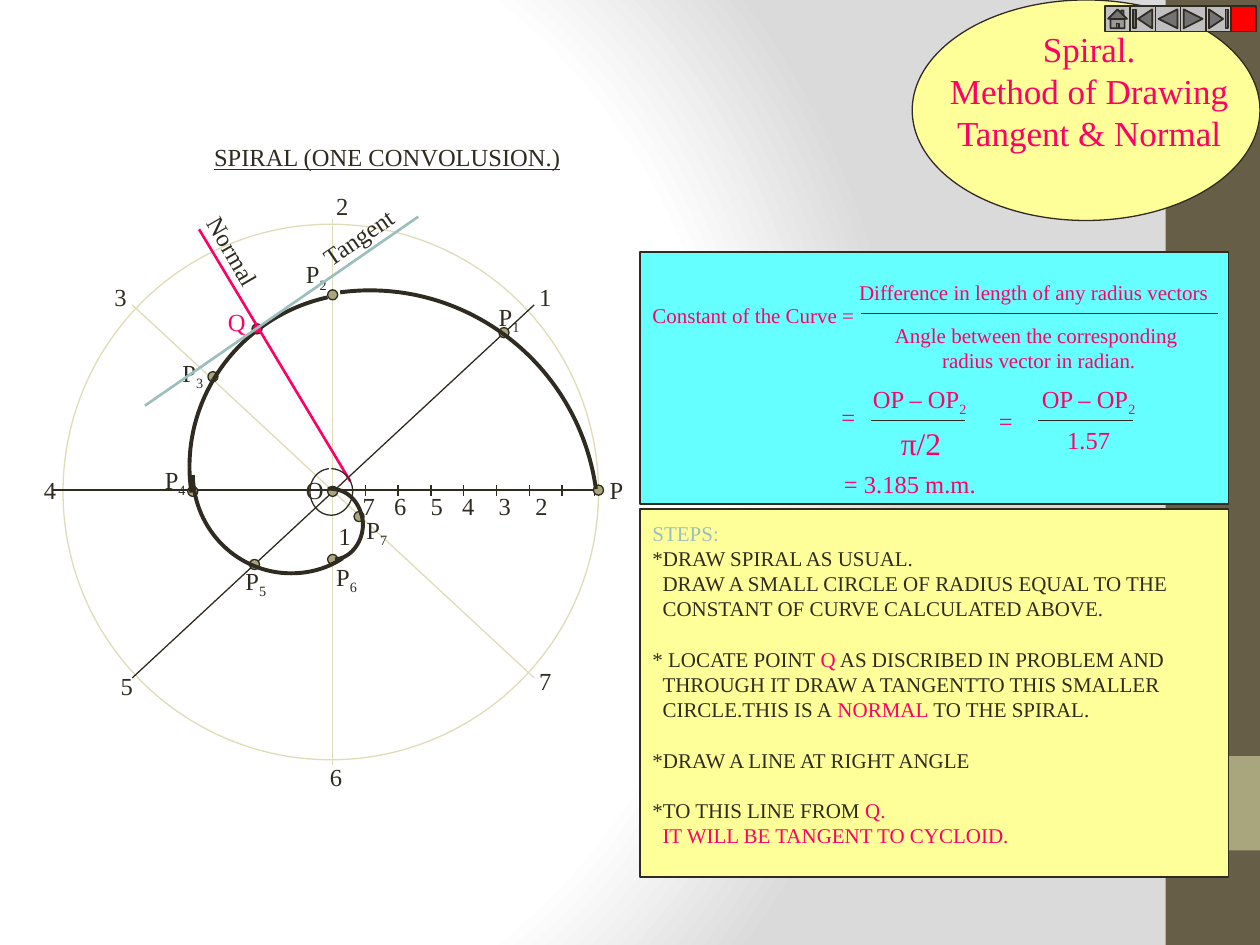
from lxml import etree
from pptx import Presentation
from pptx import util as u
from pptx.dml.color import RGBColor
from pptx.enum import shapes, text
from pptx.oxml import parse_xml
from pptx.oxml.ns import qn, nsdecls

THEME = dict(font="Times New Roman", ink="2F2B20", pink="FF0066", teal="9CBEBD",
             pale="DFDCB7", olive="A9A57C", brown="675E47", yellow="FFFF99",
             cyan="66FFFF", white="FFFFFF", grey="C0C0C0", red="FF0000", shade="DADADA",
             title=20, big=18, label=14, body=12)
UNIT = 2.54  # cm per layout unit; the slide is 10 by 7.5 units

# ---- Content ----
TITLE = ["Spiral.", "Method of Drawing", "Tangent & Normal"]
SPOKES = [(2.64, 1.74, 2.64, 6.07, "pale"), (0.41, 3.89, 4.74, 3.89, "ink"),
          (1.05, 2.42, 4.24, 5.38, "pale"), (4.24, 2.42, 1.05, 5.38, "ink")]
# Left, top, width, text; "_" starts a subscript
LABELS = [(4.74, 3.72, 0.31, "P"), (4.18, 2.19, 0.3, "1"), (2.57, 1.47, 0.3, "2"),
          (0.81, 2.19, 0.3, "3"), (0.25, 3.72, 0.3, "4"), (0.86, 5.28, 0.3, "5"),
          (2.52, 6, 0.3, "6"), (4.18, 5.24, 0.3, "7"),
          (2.33, 2.01, 0.37, "P_2"), (2.57, 4.41, 0.37, "P_6"), (3.86, 2.35, 0.37, "P_1"),
          (1.35, 2.79, 0.37, "P_3"), (1.85, 4.44, 0.37, "P_5"), (2.81, 4.04, 0.37, "P_7"),
          (1.21, 3.64, 0.37, "P_4"), (2.33, 3.72, 0.34, "O")]
DOTS = [(4.75, 3.89), (4, 2.64), (2.64, 2.34), (1.53, 3.9), (1.69, 2.99),
        (2.02, 4.48), (2.64, 4.44), (2.85, 4.1), (2.64, 3.9)]
# Bezier chains: start, then two controls and an end for each piece
SPIRAL = [
    [(4.73, 3.88), (4.59, 2.88), (3.68, 2.19), (2.7, 2.32)],
    [(2.6, 2.36), (1.88, 2.52), (1.41, 3.2), (1.52, 3.91)],
    [(1.53, 3.77), (1.54, 4.21), (1.89, 4.55), (2.31, 4.55),
     (2.46, 4.55), (2.6, 4.51), (2.72, 4.43)],
    [(2.66, 4.44), (2.79, 4.43), (2.89, 4.29), (2.88, 4.14),
     (2.86, 3.98), (2.75, 3.87), (2.6, 3.88)]]
SMALL_CIRCLE = [(2.63, 3.72), (2.72, 3.72), (2.8, 3.8), (2.8, 3.9), (2.8, 4), (2.72, 4.09),
                (2.63, 4.09), (2.53, 4.09), (2.46, 4), (2.46, 3.9),
                (2.46, 3.81), (2.52, 3.73), (2.61, 3.72)]
TICK_TABS = [0.19, 0.44, 0.73, 0.98, 1.27, 1.56]
# Left, top, width, size, centred, lines
FORMULA = [(5.08, 2.35, 1.81, "body", False, ["Constant of the Curve ="]),
           (6.72, 2.17, 2.99, "body", False, ["Difference in length of any radius vectors"]),
           (7, 2.51, 2.49, "body", True,
            ["Angle between the corresponding ", "radius vector in radian."]),
           (6.83, 3, 0.95, "label", False, ["OP – OP_2"]),
           (6.85, 3.32, 0.92, "big", True, ["π/2"]),
           (8.17, 3, 0.95, "label", False, ["OP – OP_2"]),
           (8.18, 3.32, 0.92, "label", True, ["1.57"]),
           (6.6, 3.67, 1.26, "label", False, ["= 3.185 m.m."]),
           (7.83, 3.17, 0.31, "label", False, ["="]),
           (6.58, 3.14, 0.31, "label", False, ["="])]
FRACTION_BARS = [(6.83, 9.67, 2.49), (6.91, 7.66, 3.34), (8.24, 8.99, 3.34)]
# Each step: lines; each line: runs of text and colour
STEPS = [
    [[("STEPS:", "teal")], [("*DRAW SPIRAL AS USUAL.", "ink")],
     [("DRAW A SMALL CIRCLE OF RADIUS EQUAL TO THE", "ink")],
     [("CONSTANT OF CURVE CALCULATED ABOVE.", "ink")]],
    [[("* LOCATE POINT ", "ink"), ("Q", "pink"), (" AS DISCRIBED IN PROBLEM AND", "ink")],
     [("THROUGH IT DRAW A TANGENTTO THIS SMALLER", "ink")],
     [("CIRCLE.THIS IS A", "ink"), (" NORMAL", "pink"), (" TO THE SPIRAL.", "ink")]],
    [[("*DRAW A LINE AT RIGHT ANGLE", "ink")]],
    [[("*TO THIS LINE FROM", "ink"), (" Q.", "pink")],
     [("IT WILL BE TANGENT TO CYCLOID.", "pink")]]]
BUTTONS = ["HOME", "BEGINNING", "BACK_OR_PREVIOUS", "FORWARD_OR_NEXT", "END", "CUSTOM"]

prs = Presentation()
prs.slide_width, prs.slide_height = u.Cm(10 * UNIT), u.Cm(7.5 * UNIT)
s = prs.slides.add_slide(prs.slide_layouts[6])


# ---- Helpers ----
def pos(*values):
    return [u.Cm(v * UNIT) for v in values]


def rgb(name):
    return RGBColor.from_string(THEME[name])


def style(sp, fill, line, width=0.75):
    sp.shadow.inherit = False
    for part, colour in ((sp.fill, fill), (sp.line.fill, line)):
        if colour:
            part.solid()
            part.fore_color.rgb = rgb(colour)
        else:
            part.background()
    if line:
        sp.line.width = u.Pt(width)


def shape(kind, x, y, w, h, fill, line="ink", width=0.75):
    sp = s.shapes.add_shape(getattr(shapes.MSO_SHAPE, kind), *pos(x, y, w, h))
    style(sp, fill, line, width)


def dot(x, y, fill="olive"):
    shape("OVAL", x - 0.04, y - 0.04, 0.08, 0.08, fill)


def line(x1, y1, x2, y2, colour="ink", width=0.75):
    cn = s.shapes.add_connector(shapes.MSO_CONNECTOR.STRAIGHT, *pos(x1, y1, x2, y2))
    cn.line.color.rgb, cn.line.width = rgb(colour), u.Pt(width)
    etree.SubElement(cn._element.spPr, qn("a:effectLst"))


def curve(chain, width):
    fb = s.shapes.build_freeform(*pos(*chain[0]))
    fb.add_line_segments([pos(*point) for point in chain[1:]], close=False)
    sp = fb.convert_to_shape()
    style(sp, None, "ink", width)
    # Join every three segments into one Bezier piece
    outline = next(sp._element.iter(qn("a:path")))
    segments = outline.findall(qn("a:lnTo"))
    for i in range(0, len(segments), 3):
        bezier = etree.SubElement(outline, qn("a:cubicBezTo"))
        for segment in segments[i:i + 3]:
            bezier.append(segment[0])
            outline.remove(segment)


def add_run(p, words, size, colour, underline=False):
    for i, piece in enumerate(words.split("_")):
        r = p.add_run()
        r.text = piece
        f = r.font
        f.name, f.size, f.color.rgb = THEME["font"], u.Pt(THEME[size]), rgb(colour)
        if underline:
            f.underline = True
        if i:
            f._element.set("baseline", "-25000")


def textbox(x, y, w, lines, size="label", colour="ink", centred=False, turn=0,
            underline=False, wrap=False):
    """Each line is a string or a list of (text, colour) runs."""
    h = 0.1 + len(lines) * THEME[size] / 60
    sp = s.shapes.add_textbox(*pos(x, y, w, h))
    sp.rotation = turn
    tf = sp.text_frame
    tf.word_wrap, tf.auto_size = wrap, text.MSO_AUTO_SIZE.SHAPE_TO_FIT_TEXT
    for i, runs in enumerate(lines):
        p = tf.add_paragraph() if i else tf.paragraphs[0]
        if centred:
            p.alignment = text.PP_ALIGN.CENTER
        for words, c in [(runs, colour)] if isinstance(runs, str) else runs:
            add_run(p, words, size, c, underline)
    return tf


# ---- Background and side band ----
stops = "".join(f'<a:gs pos="{at}000"><a:srgbClr val="{THEME[c]}"/></a:gs>'
                for at, c in ((0, "white"), (75, "white"), (100, "shade")))
s._element.cSld.insert(0, parse_xml(
    f'<p:bg {nsdecls("p", "a")}><p:bgPr><a:gradFill rotWithShape="1"><a:gsLst>{stops}</a:gsLst>'
    '<a:path path="circle"><a:fillToRect l="20000" t="50000" r="100000" b="50000"/></a:path>'
    '</a:gradFill><a:effectLst/></p:bgPr></p:bg>'))
shape("RECTANGLE", 9.25, 0, 0.75, 7.5, "brown", None)
shape("RECTANGLE", 9.25, 6, 0.75, 0.75, "olive", None)

# ---- Spiral diagram ----
shape("OVAL", 0.5, 1.78, 4.25, 4.25, "white", "pale")
for spoke in SPOKES:
    line(*spoke)
for i in range(8):
    x = 2.9 + 0.26 * i
    line(x, 3.85, x, 3.94)
tf = textbox(2.59, 3.85, 2.1, ["".join(f"\t{n}" for n in range(7, 1, -1)), "1"], wrap=True)
tabs = etree.SubElement(tf.paragraphs[0]._p.get_or_add_pPr(), qn("a:tabLst"))
for t in TICK_TABS:
    etree.SubElement(tabs, qn("a:tab"), pos=str(pos(t)[0]), algn="l")
for x, y in DOTS:
    dot(x, y)
for chain in SPIRAL:
    curve(chain, 2.25)
for x, y, w, words in LABELS:
    textbox(x, y, w, [words])
textbox(1.6, 1.08, 3.08, ["SPIRAL (ONE CONVOLUSION.)"], underline=True)

# ---- Normal and tangent at Q ----
dot(2.04, 2.61, "pink")
line(1.58, 1.82, 2.78, 3.82, "pink", 1.5)
line(1.15, 3.22, 3.32, 1.72, "teal", 1.5)
textbox(1.45, 1.83, 0.8, ["Normal"], turn=59.9)
textbox(2.43, 1.71, 0.84, ["Tangent"], turn=325.6)
textbox(1.71, 2.39, 0.35, ["Q"], colour="pink")
curve(SMALL_CIRCLE, 0.75)

# ---- Title ----
shape("OVAL", 7.24, 0, 2.76, 1.75, "yellow")
textbox(7.38, 0.17, 2.53, TITLE, "title", "pink", centred=True, wrap=True)

# ---- Formula and steps panels ----
shape("RECTANGLE", 5.08, 4.04, 4.67, 2.92, "yellow")
shape("RECTANGLE", 5.08, 2, 4.67, 2, "cyan")
for x, y, w, size, centred, lines in FORMULA:
    textbox(x, y, w, lines, size, "pink", centred)
for x1, x2, y in FRACTION_BARS:
    line(x1, y, x2, y)
tf = textbox(5.08, 4.08, 4.39, sum(STEPS, []), "body")
starts = [sum(map(len, STEPS[:i])) for i in range(1, len(STEPS))]
for i, p in enumerate(tf.paragraphs):
    if i in starts:
        p.space_before = u.Pt(THEME["body"] * 1.2)
    if i and not p.text.startswith("*"):
        p._p.get_or_add_pPr().set("marL", str(pos(0.08)[0]))

# ---- Navigation buttons ----
for i, name in enumerate(BUTTONS):
    shape("ACTION_BUTTON_" + name, 8.77 + 0.2 * i, 0.05, 0.2, 0.2,
          "red" if name == "CUSTOM" else "grey", width=1)

prs.save("out.pptx")
